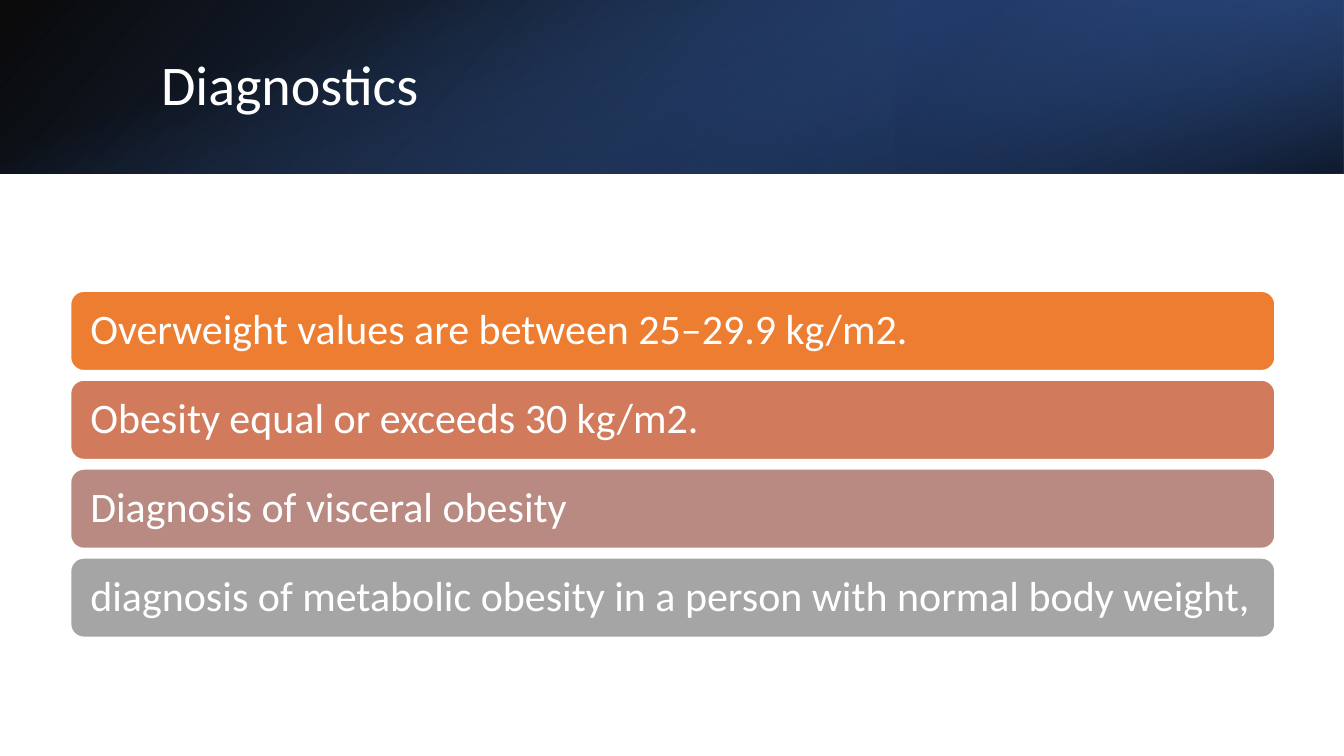
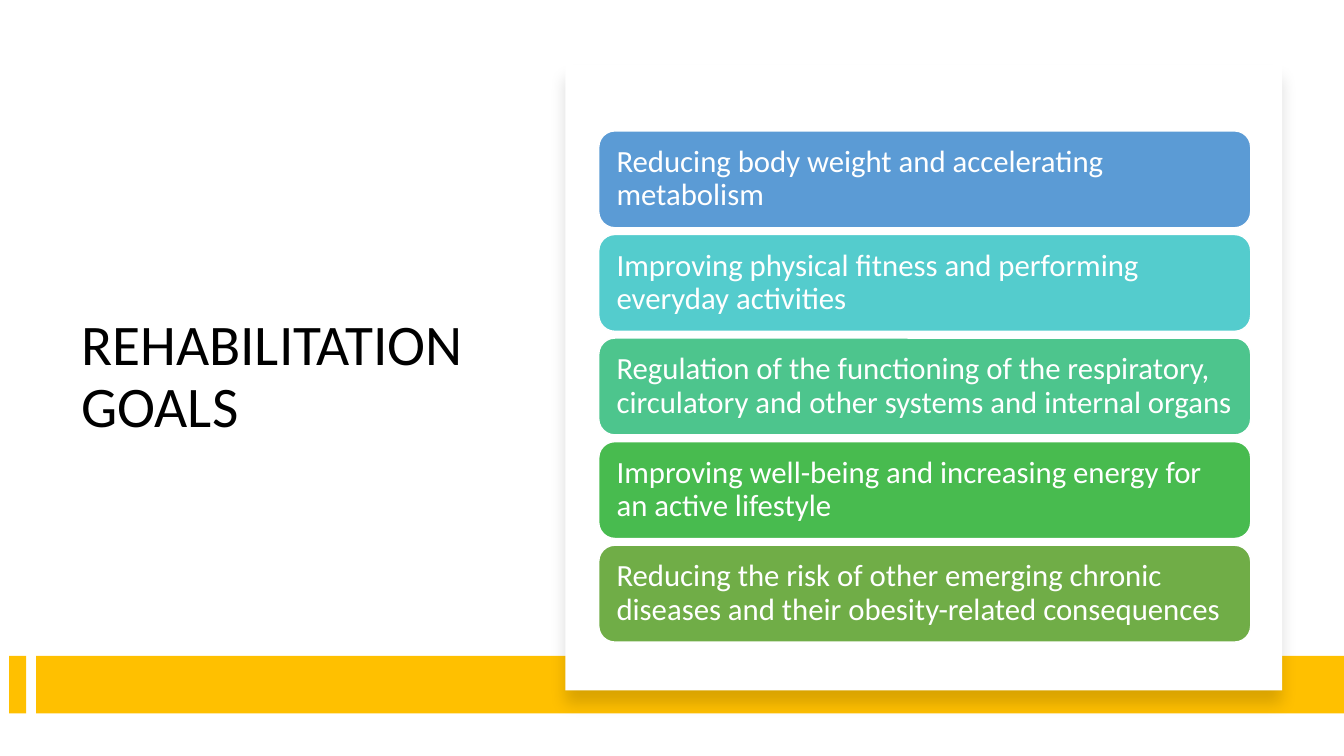
from lxml import etree
from pptx import Presentation
from pptx.dml.color import RGBColor
from pptx.enum.shapes import MSO_SHAPE
from pptx.enum.text import MSO_ANCHOR, PP_ALIGN
from pptx.oxml.ns import qn
from pptx.util import Cm, Pt

RECT = MSO_SHAPE.RECTANGLE
ROUND = MSO_SHAPE.ROUNDED_RECTANGLE
MIDDLE = MSO_ANCHOR.MIDDLE
LEFT = PP_ALIGN.LEFT

WIDE, HIGH = 33.87, 19.05
BAND = 4.37

HUES = {
    "white": "FFFFFF", "black": "000000", "gold": "FFC000",
    "navy": "203864", "deep": "2F5597", "blue": "4472C4",
    "orange": "ED7D31", "coral": "D17B5C", "rose": "B98A82", "grey": "A5A5A5",
    "sky": "5B9BD5", "aqua": "54CCCD", "mint": "4DC58D", "green": "48BB4F",
    "olive": "70AD47",
}

CHECKS = [
    ("orange", "Overweight values are between 25–29.9 kg/m2."),
    ("coral", "Obesity equal or exceeds 30 kg/m2."),
    ("rose", "Diagnosis of visceral obesity"),
    ("grey", "diagnosis of metabolic obesity in a person with normal body weight,"),
]
GOALS = [
    ("sky", "Reducing body weight and accelerating metabolism"),
    ("aqua", "Improving physical fitness and performing everyday activities"),
    ("mint", "Regulation of the functioning of the respiratory, circulatory "
             "and other systems and internal organs"),
    ("green", "Improving well-being and increasing energy for an active lifestyle"),
    ("olive", "Reducing the risk of other emerging chronic diseases and their "
              "obesity-related consequences"),
]


def color(name):
    return RGBColor.from_string(HUES[name])


def write(shape, text, size, hue="white", side=0.25):
    """Put left-aligned, vertically centred text in a shape."""
    frame = shape.text_frame
    frame.word_wrap = True
    frame.vertical_anchor = MIDDLE
    frame.margin_left = frame.margin_right = Cm(side)
    para = frame.paragraphs[0]
    para.alignment = LEFT
    para.line_spacing = 0.9
    run = para.add_run()
    run.text = text
    run.font.name = "Calibri"
    run.font.size = Pt(size)
    run.font.color.rgb = color(hue)


class Deck:
    def __init__(self):
        self.file = Presentation()
        self.file.slide_width = Cm(WIDE)
        self.file.slide_height = Cm(HIGH)
        self.slide = None

    def page(self):
        self.slide = self.file.slides.add_slide(self.file.slide_layouts[6])

    def shape(self, box, hue=None, kind=RECT):
        item = self.slide.shapes.add_shape(kind, *map(Cm, box))
        item.shadow.inherit = False
        item.line.fill.background()
        if hue:
            item.fill.solid()
            item.fill.fore_color.rgb = color(hue)
        return item

    def blend(self, box, stops, angle, turn=0, flip=False):
        """Draw a gradient box; stops are (position, hue, opacity %)."""
        item = self.shape(box)
        item.rotation = turn
        fill = item.fill
        fill.gradient()
        fill.gradient_angle = 360 - angle
        for stop, (pos, hue, _) in zip(fill.gradient_stops, stops):
            stop.position = pos
            stop.color.rgb = color(hue)
        props = item._element.spPr
        for node, (_, _, alpha) in zip(props.iter(qn("a:srgbClr")), stops):
            etree.SubElement(node, qn("a:alpha"), val=str(alpha * 1000))
        if flip:
            props.find(qn("a:xfrm")).set("flipH", "1")

    def panel(self, box):
        """Draw a white card with a soft shadow below it."""
        item = self.shape(box, "white")
        effect = item._element.spPr.find(qn("a:effectLst"))
        shade = etree.SubElement(
            effect, qn("a:outerShdw"), blurRad=str(Pt(11)), dist=str(Pt(10)),
            dir="5400000", algn="t", rotWithShape="0")
        tint = etree.SubElement(shade, qn("a:srgbClr"), val=HUES["black"])
        etree.SubElement(tint, qn("a:alpha"), val="15000")

    def title(self, text, box, size, hue):
        write(self.slide.shapes.add_textbox(*map(Cm, box)), text, size, hue)

    def stack(self, rows, box, gap, size, side):
        """Stack rounded bars; box is that of the first bar."""
        left, top, wide, high = box
        for i, (hue, text) in enumerate(rows):
            spot = (left, top + i * (high + gap), wide, high)
            bar = self.shape(spot, hue, ROUND)
            bar.line.color.rgb = color("white")
            bar.line.width = Pt(1)
            write(bar, text, size, side=side)


def checks(deck):
    deck.page()
    deck.blend((0, 0, WIDE, BAND), [(0, "black", 96), (1, "deep", 100)],
               140, flip=True)
    deck.blend((WIDE * 2 / 3, 0, WIDE / 3, BAND),
               [(0.19, "navy", 68), (1, "blue", 79)], 320, turn=180, flip=True)
    mid = (WIDE - BAND) / 2
    deck.blend((mid, -mid, BAND, WIDE),
               [(0.23, "blue", 0), (0.99, "black", 74)], 340, turn=90)
    deck.title("Diagnostics", (3.81, 0.97, 27.89, 2.44), 40, "white")
    deck.stack(CHECKS, (1.78, 7.34, 30.35, 2), 0.24, 30, 0.4)


def goals(deck):
    deck.page()
    deck.title("REHABILITATION GOALS", (1.8, 3.05, 10.54, 12.95), 41, "black")
    for left, wide in ((0.23, 0.43), (0.91, WIDE - 0.91)):
        deck.shape((left, 16.53, wide, 1.45), "gold")
    deck.panel((14.25, 1.63, 18.06, 15.77))
    deck.stack(GOALS, (15.09, 3.3, 16.43, 2.44), 0.17, 22, 0.33)


def main():
    deck = Deck()
    checks(deck)
    goals(deck)
    deck.file.save("out.pptx")


if __name__ == "__main__":
    main()
